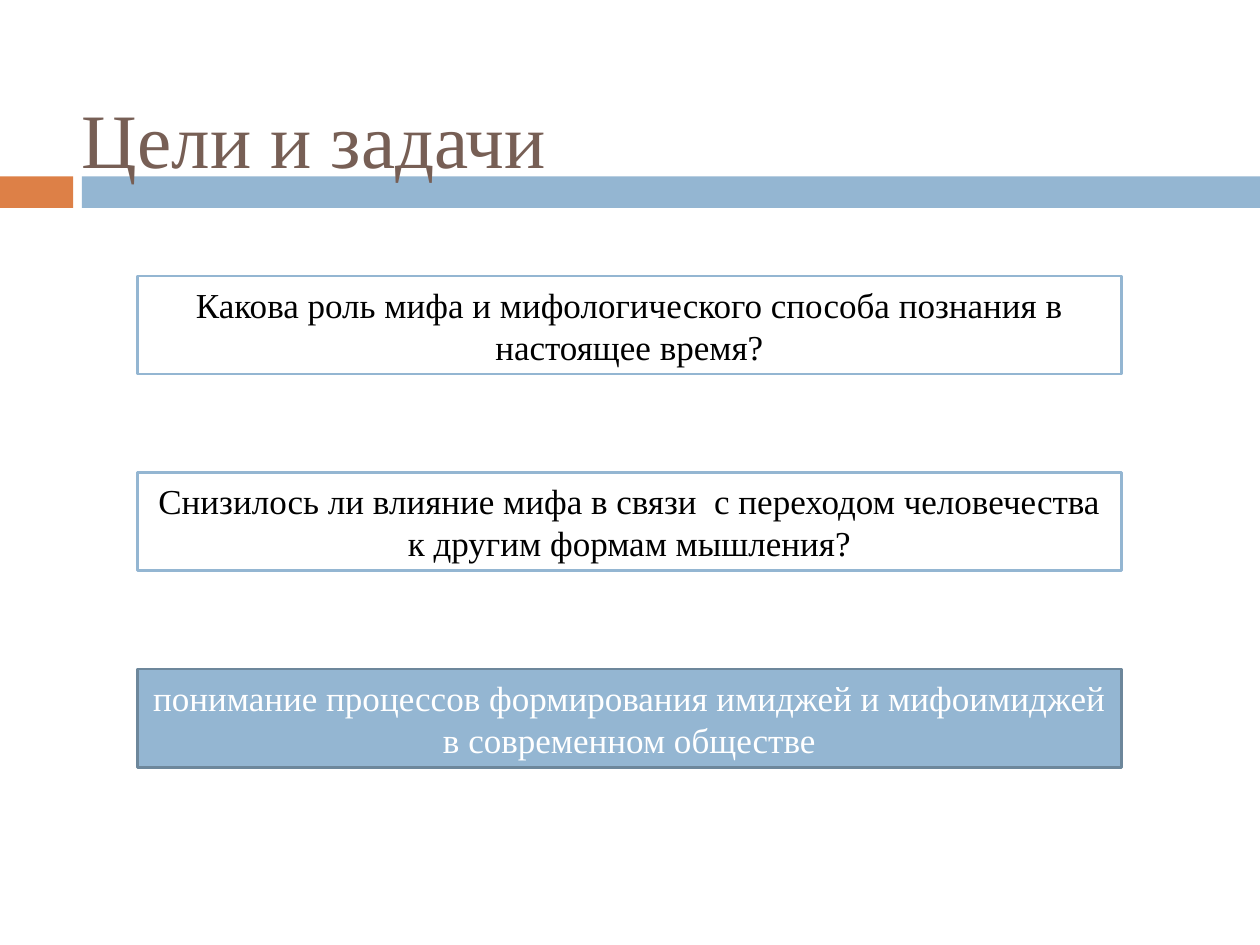
from pptx import Presentation
from pptx.dml.color import RGBColor
from pptx.enum.shapes import MSO_SHAPE
from pptx.enum.text import MSO_ANCHOR, PP_ALIGN
from pptx.util import Inches, Pt


def color(hex_text):
    return RGBColor.from_string(hex_text)


def add_box(left, top, width, height, fill, line=None):
    box = slide.shapes.add_shape(
        MSO_SHAPE.RECTANGLE, Inches(left), Inches(top), Inches(width), Inches(height))
    box.shadow.inherit = False
    box.fill.solid()
    box.fill.fore_color.rgb = color(fill)
    if line:
        box.line.color.rgb = color(line)
        box.line.width = Pt(1.5)
    else:
        box.line.fill.background()
    return box


deck = Presentation()
deck.slide_width, deck.slide_height = Inches(10), Inches(7.5)
slide = deck.slides.add_slide(deck.slide_layouts[5])

# Band under the title
band_top, band_height = 1.4, 0.25
for left, width, fill in [(0, 0.58, "DD8047"), (0.65, 9.35, "94B6D2")]:
    add_box(left, band_top, width, band_height, fill)

# Title, in front of the band
title = slide.shapes.title
title.element.getparent().append(title.element)
title_place = {"left": 0.55, "top": 0.47, "width": 4.77, "height": 1.25}
for name, length in title_place.items():
    setattr(title, name, Inches(length))
title.text_frame.text = "Цели и задачи"
title.text_frame.vertical_anchor = MSO_ANCHOR.MIDDLE
para = title.text_frame.paragraphs[0]
para.alignment = PP_ALIGN.LEFT
title_font = para.runs[0].font
for name, value in {"name": "Times New Roman", "size": Pt(44)}.items():
    setattr(title_font, name, value)
title_font.color.rgb = color("775F55")

# Questions and conclusion, evenly spaced rows
first_top, row_step = 2.19, 1.56
rows = [
    ("Какова роль мифа и мифологического способа познания в настоящее время?",
     "FFFFFF", "94B6D2", "000000"),
    ("Снизилось ли влияние мифа в связи  с переходом человечества к другим формам мышления?",
     "FFFFFF", "94B6D2", "000000"),
    ("понимание процессов формирования имиджей и мифоимиджей в современном обществе",
     "94B6D2", "6D879B", "FFFFFF"),
]
for index, (text, fill, line, text_color) in enumerate(rows):
    box = add_box(1.09, first_top + index * row_step, 7.81, 0.78, fill, line)
    frame = box.text_frame
    frame.word_wrap = True
    frame.vertical_anchor = MSO_ANCHOR.MIDDLE
    frame.text = text
    para = frame.paragraphs[0]
    para.alignment = PP_ALIGN.CENTER
    box_font = para.runs[0].font
    for name, value in {"name": "Times New Roman", "size": Pt(20)}.items():
        setattr(box_font, name, value)
    box_font.color.rgb = color(text_color)

deck.save("out.pptx")
